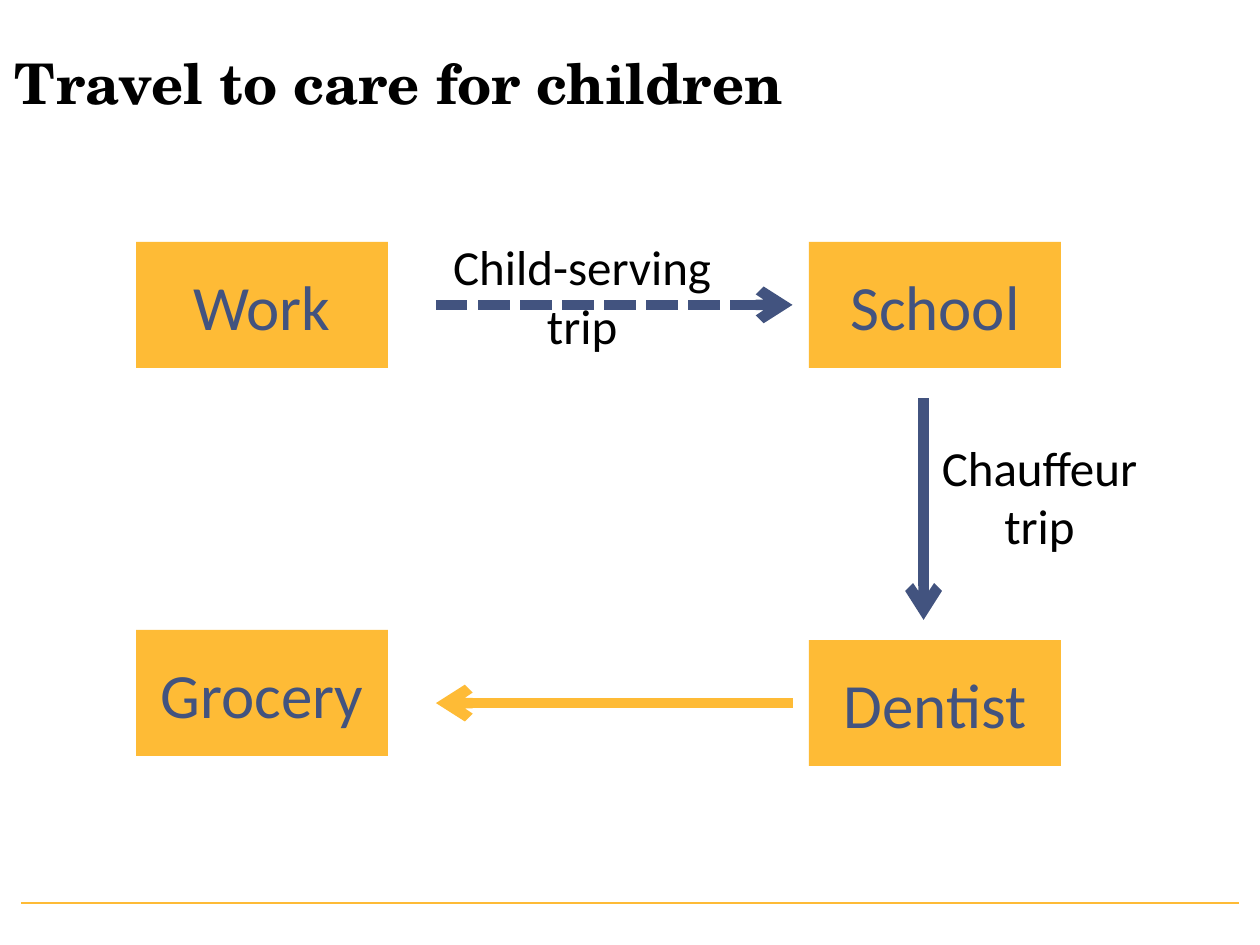
from dataclasses import dataclass

from lxml import etree
from pptx import Presentation
from pptx.dml.color import RGBColor
from pptx.enum.dml import MSO_LINE
from pptx.enum.shapes import MSO_CONNECTOR, MSO_SHAPE
from pptx.enum.text import MSO_ANCHOR, PP_ALIGN
from pptx.oxml.ns import qn
from pptx.util import Inches, Pt

GOLD = RGBColor(0xFE, 0xBB, 0x36)
NAVY = RGBColor(0x42, 0x53, 0x7F)
BLACK = RGBColor(0, 0, 0)
RECT = MSO_SHAPE.RECTANGLE
STRAIGHT = MSO_CONNECTOR.STRAIGHT
DASH = MSO_LINE.SQUARE_DOT
CENTER, LEFT = PP_ALIGN.CENTER, PP_ALIGN.LEFT
MIDDLE, TOP = MSO_ANCHOR.MIDDLE, MSO_ANCHOR.TOP

STOP = {"name": "Calibri", "size": Pt(36), "bold": False}
LABEL = {"name": "Calibri", "size": Pt(28), "bold": False}
TITLE = {"name": "TeX Gyre Schola", "size": Pt(32), "bold": True}

BOX_W, BOX_H = 2, 1
COL_1, COL_2 = 1.08, 6.42
ROW_1, ROW_2 = 1.92, 5.08
NEAR, FAR = 3.46, 6.29
MID_1, MID_2 = ROW_1 + BOX_H / 2, ROW_2 + BOX_H / 2
DOWN_X = 7.33


@dataclass
class Stop:
    name: str
    left: float
    top: float


@dataclass
class Trip:
    start: tuple[float, float]
    end: tuple[float, float]
    color: RGBColor
    dashed: bool = False


@dataclass
class Note:
    lines: list[str]
    area: tuple[float, float, float, float]
    style: dict
    align: PP_ALIGN = CENTER
    anchor: MSO_ANCHOR = TOP


STOPS = [
    Stop("Work", COL_1, ROW_1),
    Stop("School", COL_2, ROW_1),
    Stop("Dentist", COL_2, ROW_2),
    Stop("Grocery", COL_1, 5),
]
TRIPS = [
    Trip((NEAR, MID_1), (FAR, MID_1), NAVY, dashed=True),
    Trip((DOWN_X, 3.16), (DOWN_X, 4.92), NAVY),
    Trip((FAR, MID_2), (NEAR, MID_2), GOLD),
]
NOTES = [
    Note(["Travel to care for children"], (0.02, 0.03, 9, 1.25), TITLE, LEFT, MIDDLE),
    Note(["Child-serving trip"], (3.33, 1.83, 2.58, 1.04), LABEL),
    Note(["Chauffeur", "trip"], (7.25, 3.42, 2, 1.04), LABEL),
]


def write(frame, lines: list[str], style: dict, color: RGBColor,
          align: PP_ALIGN, anchor: MSO_ANCHOR) -> None:
    frame.word_wrap = True
    frame.vertical_anchor = anchor
    for i, line in enumerate(lines):
        para = frame.add_paragraph() if i else frame.paragraphs[0]
        para.alignment = align
        run = para.add_run()
        run.text = line
        for key, value in style.items():
            setattr(run.font, key, value)
        run.font.color.rgb = color


def add_stop(slide, stop: Stop) -> None:
    box = slide.shapes.add_shape(
        RECT, Inches(stop.left), Inches(stop.top), Inches(BOX_W), Inches(BOX_H))
    box.shadow.inherit = False
    box.fill.solid()
    box.fill.fore_color.rgb = GOLD
    box.line.fill.background()
    write(box.text_frame, [stop.name], STOP, NAVY, CENTER, MIDDLE)


def add_line(slide, start: tuple[float, float], end: tuple[float, float],
             color: RGBColor, width: float):
    """Draw a straight line without a shadow."""
    line = slide.shapes.add_connector(
        STRAIGHT, *(Inches(n) for n in (*start, *end)))
    line.line.color.rgb = color
    line.line.width = Pt(width)
    etree.SubElement(line._element.spPr, qn("a:effectLst"))
    return line


def add_trip(slide, trip: Trip) -> None:
    line = add_line(slide, trip.start, trip.end, trip.color, 6).line
    if trip.dashed:
        line.dash_style = DASH
    etree.SubElement(line._get_or_add_ln(), qn("a:tailEnd"), type="arrow")


def add_note(slide, note: Note) -> None:
    box = slide.shapes.add_textbox(*(Inches(n) for n in note.area))
    write(box.text_frame, note.lines, note.style, BLACK, note.align, note.anchor)


def main() -> None:
    deck = Presentation()
    deck.slide_width, deck.slide_height = Inches(10), Inches(7.5)
    slide = deck.slides.add_slide(deck.slide_layouts[6])
    add_line(slide, (9.83, 7.17), (0.17, 7.17), GOLD, 1.25)
    for stop in STOPS:
        add_stop(slide, stop)
    for trip in TRIPS:
        add_trip(slide, trip)
    for note in NOTES:
        add_note(slide, note)
    deck.save("out.pptx")


if __name__ == "__main__":
    main()
